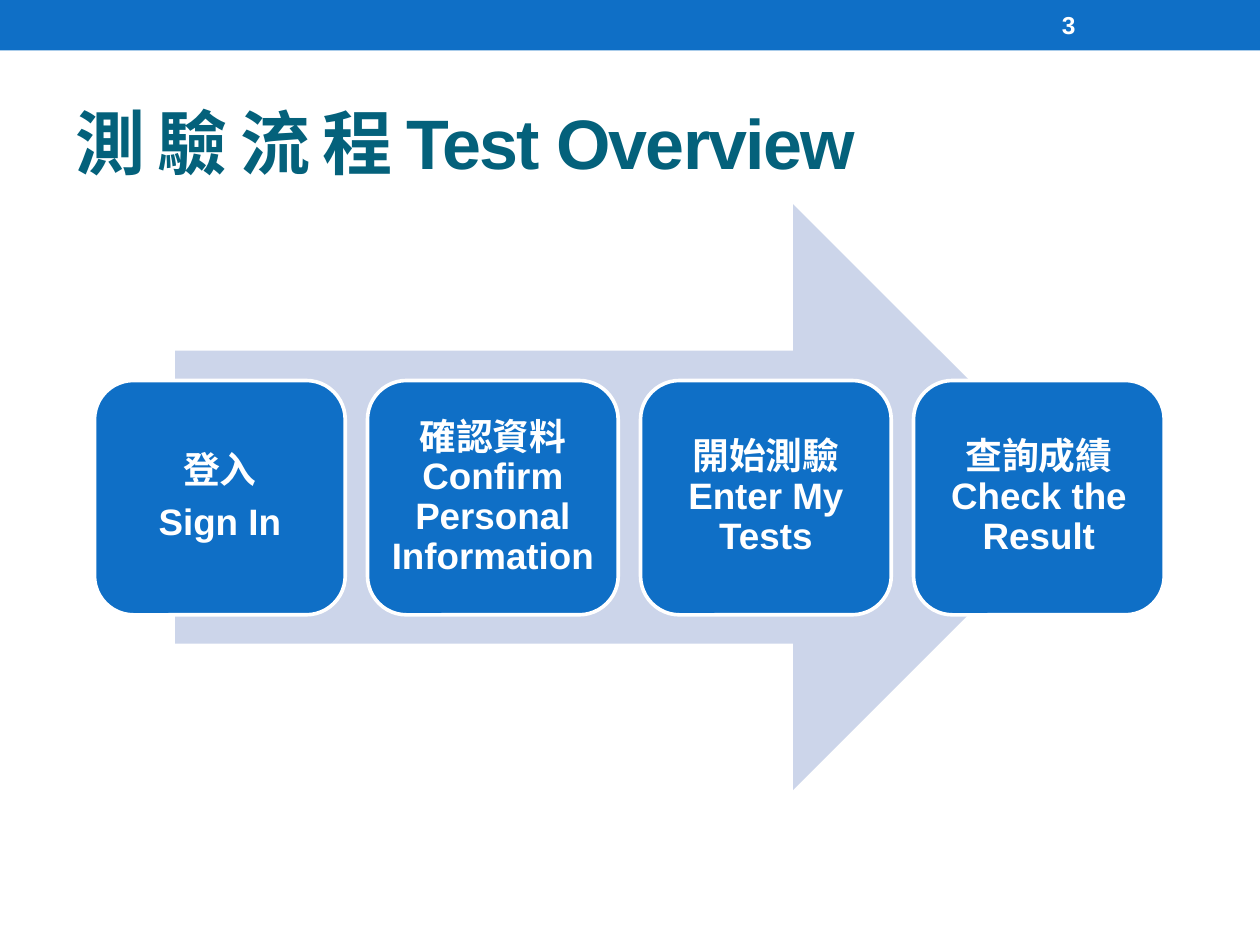
from dataclasses import dataclass

from pptx import Presentation
from pptx.dml.color import RGBColor
from pptx.enum.shapes import MSO_SHAPE
from pptx.enum.text import MSO_ANCHOR, MSO_AUTO_SIZE, PP_ALIGN
from pptx.shapes.autoshape import Shape
from pptx.slide import Slide
from pptx.text.text import TextFrame
from pptx.util import Pt

BLUE = RGBColor(0x0F, 0x6F, 0xC6)
TEAL = RGBColor(0x04, 0x61, 0x7B)
PALE_BLUE = RGBColor(0xCC, 0xD5, 0xEA)
WHITE = RGBColor(0xFF, 0xFF, 0xFF)


@dataclass
class Area:
    left: float
    top: float
    width: float
    height: float

    def lengths(self) -> tuple:
        return Pt(self.left), Pt(self.top), Pt(self.width), Pt(self.height)


@dataclass
class Style:
    size: float
    color: RGBColor
    align: PP_ALIGN = PP_ALIGN.LEFT
    line_spacing: float = 1.0
    space_after: float = 0


FIRST_STEP = Area(54, 217.44, 143.28, 133.92)
STEP_PITCH = 156
STEP_INSET = 6.5
STEP_STYLE = Style(21, WHITE, PP_ALIGN.CENTER, 0.9, 7.35)
STEPS = [
    ["登入", "Sign In"],
    ["確認資料 Confirm Personal Information"],
    ["開始測驗 Enter My Tests"],
    ["查詢成績 Check the Result"],
]


def write(frame: TextFrame, lines: list[str], style: Style) -> None:
    frame.word_wrap = True
    frame.auto_size = MSO_AUTO_SIZE.NONE
    frame.vertical_anchor = MSO_ANCHOR.MIDDLE
    para_format = {
        "alignment": style.align,
        "line_spacing": style.line_spacing,
        "space_before": Pt(0),
        "space_after": Pt(style.space_after),
    }
    font_format = {"name": "Arial", "size": Pt(style.size), "bold": True}
    for number, line in enumerate(lines):
        para = frame.add_paragraph() if number else frame.paragraphs[0]
        for name, value in para_format.items():
            setattr(para, name, value)
        span = para.add_run()
        span.text = line
        for name, value in font_format.items():
            setattr(span.font, name, value)
        span.font.color.rgb = style.color


def add_filled(page: Slide, kind: MSO_SHAPE, area: Area, color: RGBColor) -> Shape:
    shape = page.shapes.add_shape(kind, *area.lengths())
    shape.shadow.inherit = False
    shape.fill.solid()
    shape.fill.fore_color.rgb = color
    shape.line.fill.background()
    return shape


def add_step(page: Slide, number: int, lines: list[str]) -> None:
    area = Area(FIRST_STEP.left + number * STEP_PITCH, FIRST_STEP.top,
                FIRST_STEP.width, FIRST_STEP.height)
    box = add_filled(page, MSO_SHAPE.ROUNDED_RECTANGLE, area, BLUE)
    box.line.color.rgb = WHITE
    box.line.width = Pt(2.08)
    for side in ("left", "top", "right", "bottom"):
        setattr(box.text_frame, f"margin_{side}", Pt(STEP_INSET))
    write(box.text_frame, lines, STEP_STYLE)


def main() -> None:
    deck = Presentation()
    deck.slide_width, deck.slide_height = Pt(720), Pt(540)
    page = deck.slides.add_slide(deck.slide_layouts[5])

    # Top band
    add_filled(page, MSO_SHAPE.RECTANGLE, Area(0, 0, 720, 28.8), BLUE)

    # Title, slightly tightened
    title = page.shapes.title
    title.left, title.top, title.width, title.height = Area(36, 41.76, 648, 77.76).lengths()
    write(title.text_frame, ["測 驗 流 程 Test Overview"], Style(40, TEAL))
    title.text_frame.paragraphs[0].runs[0].font._element.set("spc", "-100")

    # Process arrow with its steps
    add_filled(page, MSO_SHAPE.RIGHT_ARROW, Area(100.08, 116.64, 520.56, 334.8), PALE_BLUE)
    for number, lines in enumerate(STEPS):
        add_step(page, number, lines)

    # Page number
    box = page.shapes.add_textbox(*Area(599.76, 1.44, 84.24, 25.92).lengths())
    write(box.text_frame, ["3"], Style(14, WHITE))

    deck.save("out.pptx")


if __name__ == "__main__":
    main()
